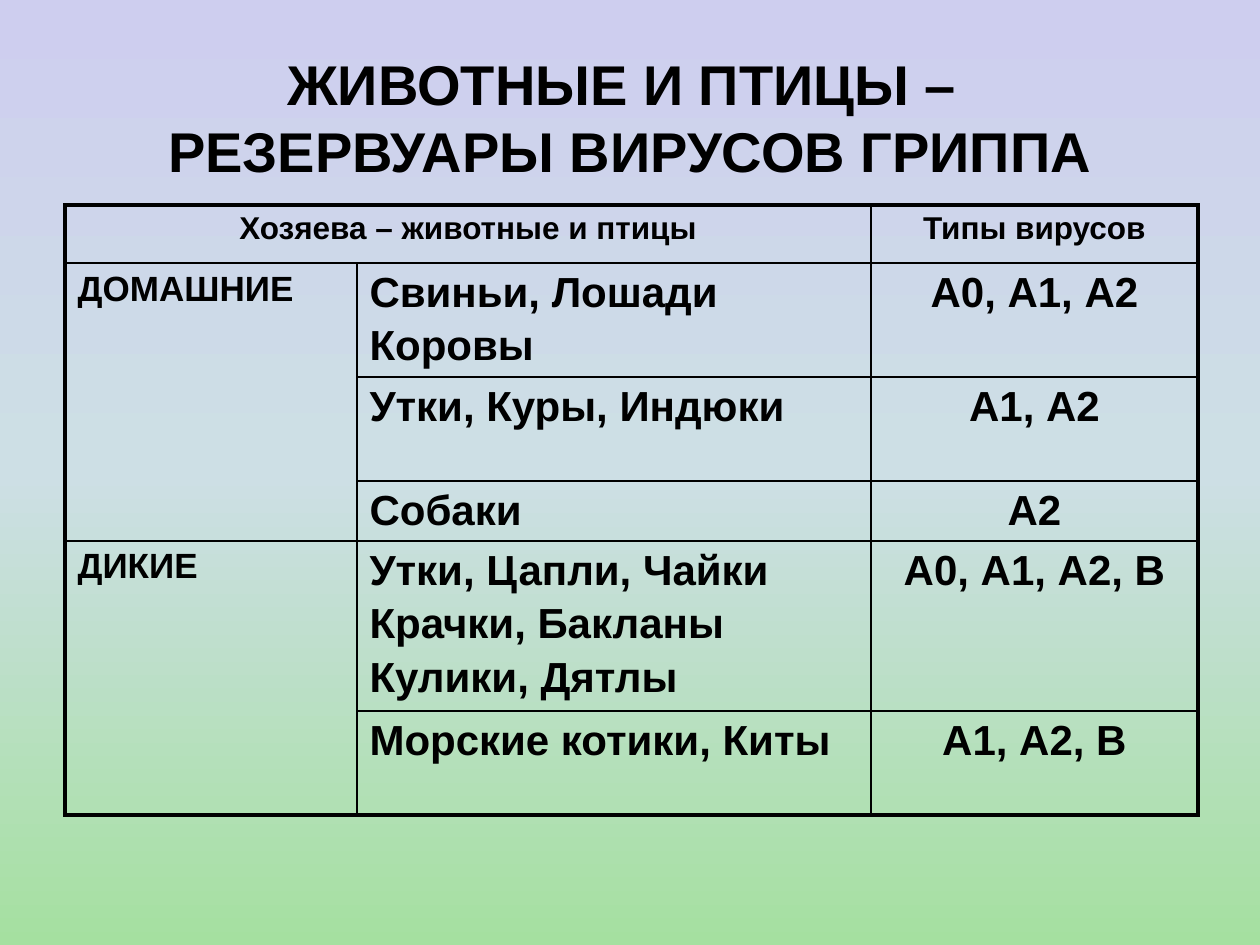
from copy import deepcopy
from dataclasses import dataclass

from lxml.etree import SubElement
from pptx import Presentation
from pptx.dml.color import RGBColor
from pptx.enum.text import MSO_ANCHOR, MSO_AUTO_SIZE, PP_ALIGN
from pptx.oxml.ns import qn
from pptx.slide import Slide
from pptx.table import Table, _Cell
from pptx.text.text import TextFrame
from pptx.util import Emu, Inches, Pt

BLACK = RGBColor(0x00, 0x00, 0x00)
LAVENDER = RGBColor(0xCE, 0xCE, 0xEF)
PALE_BLUE = RGBColor(0xCD, 0xDF, 0xE5)
GREEN = RGBColor(0xA5, 0xE0, 0xA0)

FONT = "Arial"
OUTER_LINE = 2.25
INNER_LINE = 1
COLUMN_WIDTHS = (292, 514, 327)
ROW_HEIGHTS = (58, 114, 104, 60, 170, 104)


@dataclass(frozen=True)
class Entry:
    row: int
    column: int
    text: str
    size: int = 24
    centered: bool = False
    rows: int = 1
    columns: int = 1


ENTRIES = (
    Entry(0, 0, "Хозяева – животные и птицы", 18, True, columns=2),
    Entry(0, 2, "Типы вирусов", 18, True),
    Entry(1, 0, "ДОМАШНИЕ", 20, rows=3),
    Entry(1, 1, "Свиньи, Лошади\nКоровы"),
    Entry(1, 2, "А0, А1, А2", centered=True),
    Entry(2, 1, "Утки, Куры, Индюки"),
    Entry(2, 2, "А1, А2", centered=True),
    Entry(3, 1, "Собаки"),
    Entry(3, 2, "А2", centered=True),
    Entry(4, 0, "ДИКИЕ", 20, rows=2),
    Entry(4, 1, "Утки, Цапли, Чайки\nКрачки, Бакланы\nКулики, Дятлы"),
    Entry(4, 2, "А0, А1, А2, В", centered=True),
    Entry(5, 1, "Морские котики, Киты"),
    Entry(5, 2, "А1, А2, В", centered=True),
)


def px(length: int) -> Emu:
    return Emu(round(length * 914400 / 126))


def write_text(frame: TextFrame, text: str, *, size: int, centered: bool = False) -> None:
    frame.text = text
    for index, para in enumerate(frame.paragraphs):
        para.alignment = PP_ALIGN.CENTER if centered else PP_ALIGN.LEFT
        para.space_before = Pt(size * 0.16) if index else Pt(0)
        for span in para.runs:
            span.font.name = FONT
            span.font.size = Pt(size)
            span.font.bold = True
            span.font.color.rgb = BLACK


def paint_background(page: Slide) -> None:
    fill = page.background.fill
    fill.gradient()
    fill.gradient_angle = 270
    stop_list = page.element.find(".//" + qn("a:gsLst"))
    stop_list.append(deepcopy(stop_list[0]))
    for stop, color, position in zip(
        fill.gradient_stops, (LAVENDER, PALE_BLUE, GREEN), (0, 0.5, 1)
    ):
        stop.color.rgb = color
        stop.position = position


def draw_borders(cell: _Cell, entry: Entry) -> None:
    outer_edges = {
        "lnL": entry.column == 0,
        "lnR": entry.column + entry.columns == len(COLUMN_WIDTHS),
        "lnT": entry.row == 0,
        "lnB": entry.row + entry.rows == len(ROW_HEIGHTS),
    }
    properties = cell._tc.get_or_add_tcPr()
    for index, (edge, is_outer) in enumerate(outer_edges.items()):
        width = Pt(OUTER_LINE if is_outer else INNER_LINE)
        line = SubElement(properties, qn(f"a:{edge}"), w=str(width))
        properties.insert(index, line)
        fill = SubElement(line, qn("a:solidFill"))
        SubElement(fill, qn("a:srgbClr"), val=str(BLACK))


def add_host_table(page: Slide) -> Table:
    table = page.shapes.add_table(
        len(ROW_HEIGHTS), len(COLUMN_WIDTHS),
        px(65), px(205), px(sum(COLUMN_WIDTHS)), px(sum(ROW_HEIGHTS)),
    ).table
    table.first_row = False
    table.horz_banding = False
    for column, width in zip(table.columns, COLUMN_WIDTHS):
        column.width = px(width)
    for row, height in zip(table.rows, ROW_HEIGHTS):
        row.height = px(height)
    for cell in table.iter_cells():
        cell.fill.background()
    return table


def fill_entry(table: Table, entry: Entry) -> None:
    cell = table.cell(entry.row, entry.column)
    if entry.rows > 1 or entry.columns > 1:
        cell.merge(table.cell(entry.row + entry.rows - 1, entry.column + entry.columns - 1))
    write_text(cell.text_frame, entry.text, size=entry.size, centered=entry.centered)
    draw_borders(cell, entry)


def add_title(page: Slide) -> None:
    title = page.shapes.title
    title.left, title.top, title.width, title.height = map(px, (63, 38, 1134, 158))
    frame = title.text_frame
    frame.word_wrap = True
    frame.auto_size = MSO_AUTO_SIZE.NONE
    frame.vertical_anchor = MSO_ANCHOR.MIDDLE
    write_text(
        frame, "ЖИВОТНЫЕ И ПТИЦЫ – \vРЕЗЕРВУАРЫ ВИРУСОВ ГРИППА", size=32, centered=True
    )


def main() -> None:
    deck = Presentation()
    deck.slide_width, deck.slide_height = Inches(10), Inches(7.5)
    page = deck.slides.add_slide(deck.slide_layouts[5])
    paint_background(page)
    add_title(page)
    table = add_host_table(page)
    for entry in ENTRIES:
        fill_entry(table, entry)
    deck.save("out.pptx")


if __name__ == "__main__":
    main()
